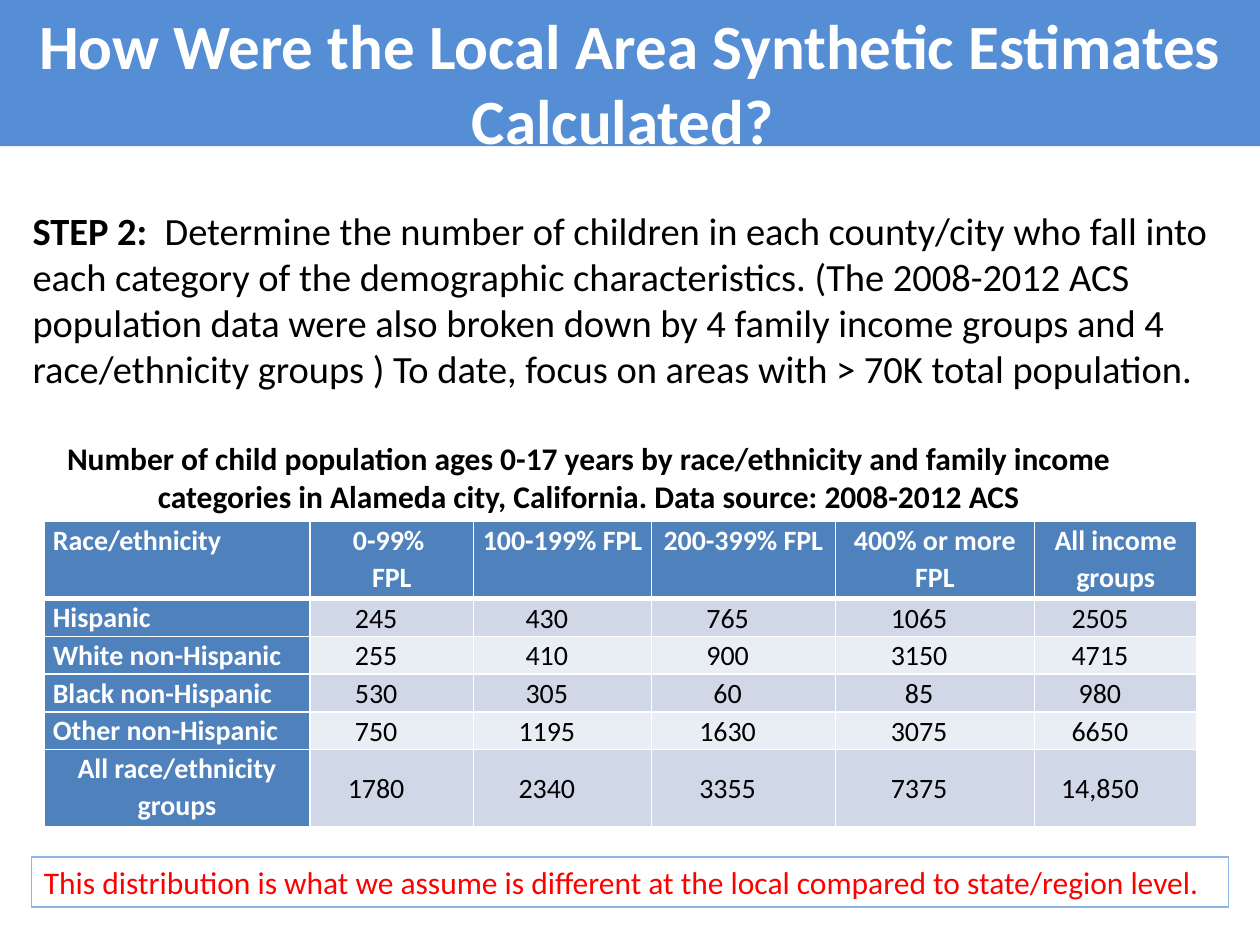
import dataclasses
import typing

import lxml.etree
import pptx
import pptx.dml.color
import pptx.enum.shapes
import pptx.enum.text
import pptx.oxml.ns
import pptx.util

Inches = pptx.util.Inches
Align = pptx.enum.text.PP_ALIGN
Anchor = pptx.enum.text.MSO_ANCHOR
qn = pptx.oxml.ns.qn

HUES = {
    "band": "558ED5", "head": "4F81BD", "odd": "D0D8E8", "even": "E9EDF4",
    "edge": "8EB4E3", "white": "FFFFFF", "black": "000000", "red": "FF0000",
}
COLS = [2.11, 1.3, 1.41, 1.46, 1.58, 1.29]
ROWS = [0.61, 0.3, 0.3, 0.3, 0.3, 0.61]
DATA = [
    ["Race/ethnicity", "0-99% \nFPL", "100-199% FPL", "200-399% FPL",
     "400% or more FPL", "All income groups"],
    ["Hispanic", "245", "430", "765", "1065", "2505"],
    ["White non-Hispanic", "255", "410", "900", "3150", "4715"],
    ["Black non-Hispanic", "530", "305", "60", "85", "980"],
    ["Other non-Hispanic", "750", "1195", "1630", "3075", "6650"],
    ["All race/ethnicity groups", "1780", "2340", "3355", "7375", "14,850"],
]


@dataclasses.dataclass
class Box:
    left: float
    top: float
    width: float
    height: float
    fill: typing.Optional[str] = None
    line: typing.Optional[str] = None
    anchor: Anchor = Anchor.TOP


def tint(name: str) -> pptx.dml.color.RGBColor:
    return pptx.dml.color.RGBColor.from_string(HUES[name])


def write(para, text: str, size: float = 18, hue: str = "black", bold: bool = False,
          align: Align = Align.LEFT, space: typing.Optional[float] = None) -> None:
    para.alignment = align
    if space:
        para.line_spacing = space
    run = para.add_run()
    run.text = text
    run.font.name = "Calibri"
    run.font.size = pptx.util.Pt(size)
    run.font.bold = bold
    run.font.color.rgb = tint(hue)


def draw(slide, box: Box):
    place = [Inches(n) for n in (box.left, box.top, box.width, box.height)]
    if box.fill or box.line:
        shape = slide.shapes.add_shape(pptx.enum.shapes.MSO_SHAPE.RECTANGLE, *place)
        shape.shadow.inherit = False
        if box.fill:
            shape.fill.solid()
            shape.fill.fore_color.rgb = tint(box.fill)
        else:
            shape.fill.background()
        if box.line:
            shape.line.color.rgb = tint(box.line)
            shape.line.width = pptx.util.Pt(1)
        else:
            shape.line.fill.background()
    else:
        shape = slide.shapes.add_textbox(*place)
    frame = shape.text_frame
    frame.word_wrap = True
    frame.vertical_anchor = box.anchor
    return frame.paragraphs[0]


def rule(cell, base: float) -> None:
    props = cell._tc.get_or_add_tcPr()
    for spot, side in enumerate("LRTB"):
        width = base if side == "B" else 1
        line = lxml.etree.Element(qn(f"a:ln{side}"), w=str(pptx.util.Pt(width)))
        fill = lxml.etree.SubElement(line, qn("a:solidFill"))
        lxml.etree.SubElement(fill, qn("a:srgbClr"), val=HUES["white"])
        props.insert(spot, line)


def dress(cell, text: str, row: int, col: int) -> None:
    label = row == 0 or col == 0
    cell.margin_left = Inches(0.07)
    cell.margin_right = Inches(0.07 if label else 0.32)
    cell.margin_top = cell.margin_bottom = 0
    cell.vertical_anchor = Anchor.TOP if label else Anchor.MIDDLE
    cell.fill.solid()
    cell.fill.fore_color.rgb = tint("head" if label else "odd" if row % 2 else "even")
    rule(cell, 3 if row == 0 else 1)
    left = col == 0 and row < len(DATA) - 1
    for n, part in enumerate(text.split("\n")):
        para = cell.text_frame.add_paragraph() if n else cell.text_frame.paragraphs[0]
        write(para, part, size=16, hue="white" if label else "black", bold=label,
              align=Align.LEFT if left else Align.CENTER, space=1.07)


def chart(slide) -> None:
    table = slide.shapes.add_table(
        len(ROWS), len(COLS), Inches(0.35), Inches(4.14),
        Inches(sum(COLS)), Inches(sum(ROWS))).table
    for col, width in zip(table.columns, COLS):
        col.width = Inches(width)
    for row, height in zip(table.rows, ROWS):
        row.height = Inches(height)
    for r, line in enumerate(DATA):
        for c, text in enumerate(line):
            dress(table.cell(r, c), text, r, c)


def main() -> None:
    deck = pptx.Presentation()
    deck.slide_width = Inches(10)
    deck.slide_height = Inches(7.5)
    slide = deck.slides.add_slide(deck.slide_layouts[6])

    title = draw(slide, Box(0, 0, 10, 1.16, fill="band"))
    write(title, "How Were the Local Area Synthetic Estimates Calculated? ",
          size=36, hue="white", bold=True, align=Align.CENTER)

    step = draw(slide, Box(0.16, 1.59, 9.69, 1.58))
    step.space_before = pptx.util.Pt(12)
    step.space_after = pptx.util.Pt(6)
    write(step, "STEP 2:  ", size=22, bold=True)
    write(step, "Determine the number of children in each county/city who fall into "
          "each category of the demographic characteristics. (The 2008-2012 ACS "
          "population data were also broken down by 4 family income groups and 4 "
          "race/ethnicity groups ) To date, focus on areas with > 70K total "
          "population.", size=22)

    chart(slide)

    head = draw(slide, Box(0.42, 3.43, 8.51, 0.71, anchor=Anchor.MIDDLE))
    write(head, "Number of child population ages 0-17 years by race/ethnicity and "
          "family income categories in Alameda city, California. Data source: "
          "2008-2012 ACS", bold=True, align=Align.CENTER)

    note = draw(slide, Box(0.25, 6.8, 9.5, 0.4, line="edge"))
    write(note, "This distribution is what we assume is different at the local "
          "compared to state/region level.", hue="red")

    deck.save("out.pptx")


if __name__ == "__main__":
    main()
